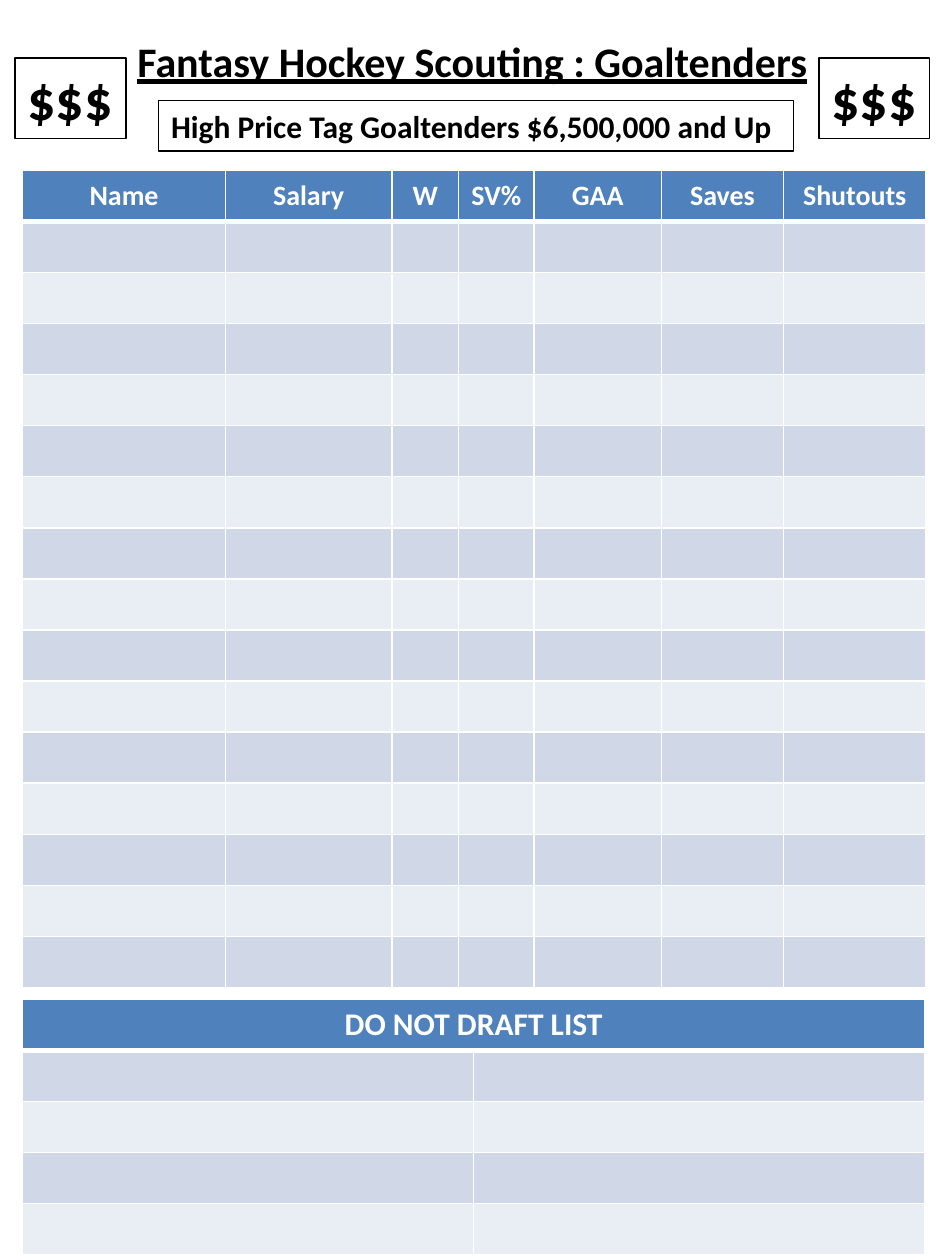
from lxml import etree
from pptx import Presentation
from pptx.dml.color import RGBColor
from pptx.enum.text import MSO_ANCHOR, PP_ALIGN
from pptx.oxml.ns import qn
from pptx.util import Inches, Pt

CENTER = PP_ALIGN.CENTER
LEFT = PP_ALIGN.LEFT
TOP = MSO_ANCHOR.TOP
MIDDLE = MSO_ANCHOR.MIDDLE
FONT = "Calibri"
COLORS = {"ink": "000000", "white": "FFFFFF", "head": "4F81BD",
          "dark": "D0D8E8", "light": "E9EDF4"}


def color(name):
    return RGBColor.from_string(COLORS[name])


def write(frame, text, size=18, tint="ink", align=LEFT, under=False):
    para = frame.paragraphs[0]
    para.alignment = align
    run = para.add_run()
    run.text = text
    font = run.font
    font.name, font.size, font.bold = FONT, Pt(size), True
    font.underline = under
    font.color.rgb = color(tint)


def edge(cell, side, width):
    line = etree.SubElement(cell._tc.get_or_add_tcPr(), qn("a:ln" + side),
                            w=str(Pt(width)))
    fill = etree.SubElement(line, qn("a:solidFill"))
    etree.SubElement(fill, qn("a:srgbClr"), val=COLORS["white"])


class Sheet:
    def __init__(self, slide):
        self.slide = slide

    def title(self, text, x, y, w, h):
        shape = self.slide.shapes.title
        shape.left, shape.top = Inches(x), Inches(y)
        shape.width, shape.height = Inches(w), Inches(h)
        shape.text_frame.vertical_anchor = MIDDLE
        write(shape.text_frame, text, size=24, align=CENTER, under=True)

    def box(self, text, x, y, w, h, size):
        shape = self.slide.shapes.add_textbox(
            Inches(x), Inches(y), Inches(w), Inches(h))
        shape.line.color.rgb = color("ink")
        shape.line.width = Pt(0.75)
        frame = shape.text_frame
        frame.word_wrap = True
        frame.margin_right = 0
        write(frame, text, size=size)

    def table(self, heads, widths, rows, y, h, size, anchor):
        grid = self.slide.shapes.add_table(
            rows, len(widths), Inches(0.18), Inches(y),
            Inches(sum(widths)), Inches(h)).table
        for col, width in zip(grid.columns, widths):
            col.width = Inches(width)
        for r in range(rows):
            for c in range(len(widths)):
                cell = grid.cell(r, c)
                for side in "LRTB":
                    thick = (r, side) in ((0, "B"), (1, "T"))
                    edge(cell, side, 3 if thick else 1)
                cell.fill.solid()
                band = "dark" if r % 2 else "light"
                cell.fill.fore_color.rgb = color(band if r else "head")
        # A single heading spans the whole first row
        if len(heads) == 1:
            grid.cell(0, 0).merge(grid.cell(0, len(widths) - 1))
        for c, head in enumerate(heads):
            cell = grid.cell(0, c)
            cell.vertical_anchor = anchor
            write(cell.text_frame, head, size=size, tint="white", align=CENTER)


def main():
    deck = Presentation()
    deck.slide_width, deck.slide_height = Inches(7.5), Inches(10)
    sheet = Sheet(deck.slides.add_slide(deck.slide_layouts[5]))

    # Title and price band
    sheet.title("Fantasy Hockey Scouting : Goaltenders", 0.56, 0.18, 6.38, 0.6)
    sheet.box("High Price Tag Goaltenders $6,500,000 and Up",
              1.26, 0.8, 5.04, 0.4, size=18)

    # List of players to avoid
    sheet.table(["DO NOT DRAFT LIST"], [3.58, 3.58], rows=5,
                y=7.93, h=2.03, size=18, anchor=TOP)

    # Price signs on both sides
    for x in (6.5, 0.12):
        sheet.box("$$$", x, 0.46, 0.88, 0.64, size=32)

    # Scouting grid
    sheet.table(["Name", "Salary", "W", "SV%", "GAA", "Saves", "Shutouts"],
                [1.61, 1.32, 0.53, 0.6, 1.01, 0.97, 1.13], rows=16,
                y=1.35, h=6.49, size=16, anchor=MIDDLE)

    deck.save("out.pptx")


if __name__ == "__main__":
    main()
